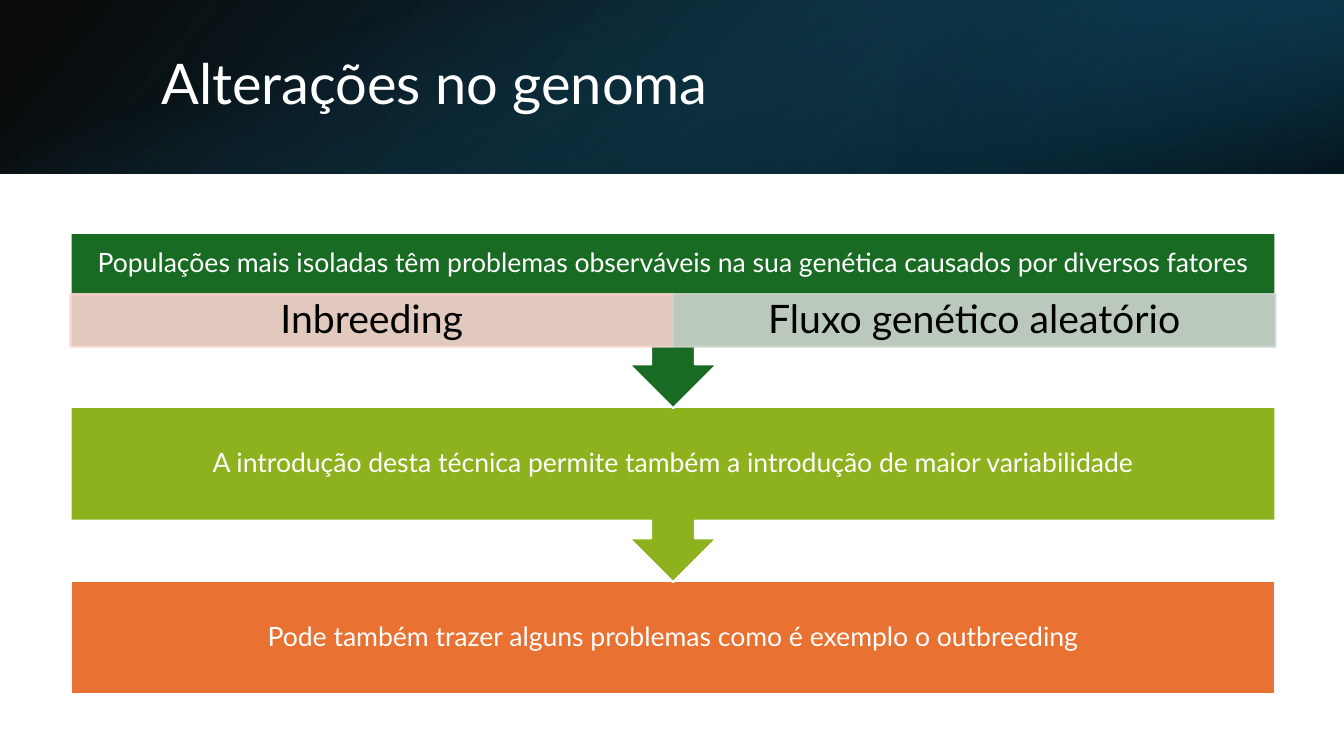
from dataclasses import dataclass

from lxml.etree import SubElement
from pptx import Presentation
from pptx.dml.color import RGBColor
from pptx.enum.shapes import MSO_SHAPE as Shp
from pptx.enum.text import MSO_ANCHOR as Anchor, MSO_AUTO_SIZE as AutoSize, PP_ALIGN as Align
from pptx.oxml.ns import qn
from pptx.util import Inches, Pt

W, H = Inches(13.333), Inches(7.5)
BANNER = 22.93
LEFT, WIDTH = 5.25, 89.65
TOP, STEP, CALLOUT = 30.8, 23, 23.2
BOX, HEADING, FACTOR = 15.07, 8.13, 6.93
WHITE, BLACK = "FFFFFF", "000000"


@dataclass
class Area:
    x: float
    y: float
    w: float
    h: float

    def emu(self) -> list[int]:
        return [round(v * side / 100) for v, side in zip((self.x, self.y, self.w, self.h), (W, H, W, H))]


@dataclass
class Stop:
    position: float
    color: str
    opacity: int


@dataclass
class Glow:
    area: Area
    angle: int
    stops: tuple[Stop, Stop]
    rotation: int = 0
    flip: bool = False


@dataclass
class Block:
    area: Area
    fill: str
    text: str
    label_h: float
    callout: bool = False
    opacity: int = 100
    size: int = 19
    color: str = WHITE
    insets: tuple[float, float] = (0.15, 0.15)


def paint(fmt, color: str) -> None:
    fmt.rgb = RGBColor.from_string(color)


def set_all(target, values: dict) -> None:
    for name, value in values.items():
        setattr(target, name, value)


def set_opacity(node, percent: int) -> None:
    if percent < 100:
        for clr in node.iter(qn("a:srgbClr")):
            SubElement(clr, qn("a:alpha")).set("val", str(percent * 1000))


def write(s, text: str, size: int, color: str, align: Align, insets: tuple[float, float]) -> None:
    tf = s.text_frame
    side, edge = map(Inches, insets)
    set_all(tf, {
        "word_wrap": True, "auto_size": AutoSize.NONE, "vertical_anchor": Anchor.MIDDLE,
        "margin_left": side, "margin_right": side, "margin_top": edge, "margin_bottom": edge,
    })
    p = tf.paragraphs[0]
    set_all(p, {"alignment": align, "line_spacing": 0.9})
    r = p.add_run()
    r.text = text
    set_all(r.font, {"name": "Lato", "size": Pt(size)})
    paint(r.font.color, color)


def draw_glow(shapes, glow: Glow) -> None:
    s = shapes.add_shape(Shp.RECTANGLE, *glow.area.emu())
    s.shadow.inherit = False
    s.rotation = glow.rotation
    s.line.fill.background()
    s.fill.gradient()
    s.fill.gradient_angle = 360 - glow.angle
    for gs, stop, node in zip(s.fill.gradient_stops, glow.stops, s.element.iter(qn("a:gs"))):
        gs.position = stop.position
        paint(gs.color, stop.color)
        set_opacity(node, stop.opacity)
    if glow.flip:
        s.element.spPr.find(qn("a:xfrm")).set("flipH", "1")


def draw_block(shapes, block: Block) -> None:
    kind = Shp.UP_ARROW_CALLOUT if block.callout else Shp.RECTANGLE
    s = shapes.add_shape(kind, *block.area.emu())
    s.shadow.inherit = False
    s.fill.solid()
    paint(s.fill.fore_color, block.fill)
    s.line.width = Pt(1.5)
    paint(s.line.color, block.fill if block.opacity < 100 else WHITE)
    set_opacity(s.element.spPr, block.opacity)
    if block.callout:
        s.rotation = 180
        area = block.area
        s = shapes.add_textbox(*Area(area.x, area.y, area.w, block.label_h).emu())
    write(s, block.text, block.size, block.color, Align.CENTER, block.insets)


def band(row: int, height: float) -> Area:
    return Area(LEFT, TOP + row * STEP, WIDTH, height)


def factor(column: int, fill: str, text: str) -> Block:
    area = Area(LEFT + column * WIDTH / 2, TOP + HEADING, WIDTH / 2, FACTOR)
    return Block(area, fill, text, FACTOR, opacity=90, size=28, color=BLACK, insets=(0.22, 0.04))


def upright(height: float) -> Area:
    w, h = height * H / W, 100 * W / H
    return Area(50 - w / 2, (height - h) / 2, w, h)


GLOWS = [
    Glow(Area(0, 0, 100, BANNER), 140, (Stop(0, BLACK, 96), Stop(1, "104862", 100)), flip=True),
    Glow(Area(66.67, 0, 33.33, BANNER), 320, (Stop(0.19, "0B3041", 68), Stop(1, "156082", 79)), 180, True),
    Glow(upright(BANNER), 340, (Stop(0.23, "156082", 0), Stop(0.99, BLACK, 74)), 90),
]

BLOCKS = [
    Block(band(2, BOX), "E97132", "Pode também trazer alguns problemas como é exemplo o outbreeding", BOX),
    Block(band(1, CALLOUT), "8EB21E",
          "A introdução desta técnica permite também a introdução de maior variabilidade", BOX, True),
    Block(band(0, CALLOUT), "196B24",
          "Populações mais isoladas têm problemas observáveis na sua genética causados por diversos fatores",
          HEADING, True),
    factor(0, "F7D5CE", "Inbreeding"),
    factor(1, "CCD4CD", "Fluxo genético aleatório"),
]


def main() -> None:
    prs = Presentation()
    set_all(prs, {"slide_width": W, "slide_height": H})
    slide = prs.slides.add_slide(prs.slide_layouts[5])
    for glow in GLOWS:
        draw_glow(slide.shapes, glow)
    title = slide.shapes.title
    title.element.getparent().append(title.element)
    set_all(title, dict(zip(("left", "top", "width", "height"), Area(11.25, 5.07, 82.35, 12.8).emu())))
    write(title, "Alterações no genoma", 40, WHITE, Align.LEFT, (0.1, 0.05))
    for block in BLOCKS:
        draw_block(slide.shapes, block)
    prs.save("out.pptx")


if __name__ == "__main__":
    main()
